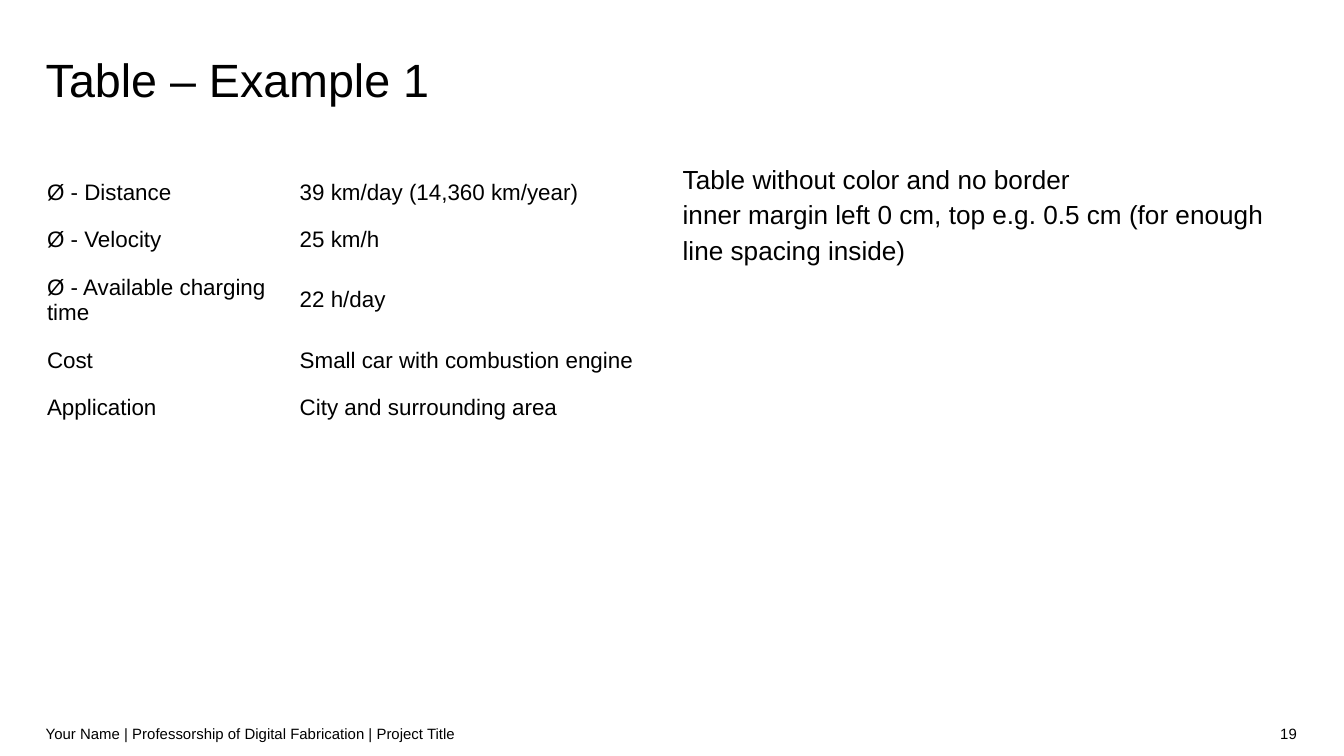
from dataclasses import dataclass

from pptx import Presentation
from pptx import util as u
from pptx.dml.color import RGBColor
from pptx.enum import text


@dataclass(frozen=True)
class Theme:
    """Colours, font and type sizes of the slide."""
    ink: RGBColor = RGBColor(0, 0, 0)
    paper: RGBColor = RGBColor(255, 255, 255)
    font: str = "Arial"
    title: int = 25
    body: int = 14
    cell: int = 12
    footer: int = 8


THEME = Theme()
LEFT = 0.34
ROWS = (
    ("Ø - Distance", "39 km/day (14,360 km/year)"),
    ("Ø - Velocity", "25 km/h"),
    ("Ø - Available charging time", "22 h/day"),
    ("Cost", "Small car with combustion engine"),
    ("Application", "City and surrounding area"),
)


def write(tf, content, size, align=text.PP_ALIGN.LEFT, spacing=None):
    """Fill the first paragraph of a text frame and format it."""
    p = tf.paragraphs[0]
    p.text = content
    p.alignment = align
    if spacing is not None:
        p.line_spacing = spacing
    for r in p.runs:
        r.font.name = THEME.font
        r.font.size = u.Pt(size)
        r.font.color.rgb = THEME.ink


def add_text(s, box, content, size, anchor=text.MSO_ANCHOR.TOP, inset=0,
             fit=text.MSO_AUTO_SIZE.NONE, **fmt):
    """Add a wrapping text box with no side margins."""
    tf = s.shapes.add_textbox(*map(u.Inches, box)).text_frame
    tf.word_wrap = True
    tf.auto_size = fit
    tf.vertical_anchor = anchor
    tf.margin_left = tf.margin_right = 0
    tf.margin_top = tf.margin_bottom = u.Inches(inset)
    write(tf, content, size, **fmt)


def add_plain_table(s, left, top, widths, height, row_height, rows):
    """Add a table without colour or border."""
    frame = s.shapes.add_table(
        len(rows), len(widths), u.Inches(left), u.Inches(top),
        u.Inches(sum(widths)), u.Inches(height))
    table = frame.table
    table.first_row = table.horz_banding = False
    style = table._tbl.tblPr[0]
    style.text = "{2D5ABB26-0587-4C30-8999-92F81FD0307C}"
    for column, width in zip(table.columns, widths):
        column.width = u.Inches(width)
    for row in table.rows:
        row.height = u.Inches(row_height)
    frame.height = u.Inches(height)
    for i, row in enumerate(rows):
        for j, content in enumerate(row):
            cell = table.cell(i, j)
            cell.fill.background()
            cell.vertical_anchor = text.MSO_ANCHOR.MIDDLE
            cell.margin_left = cell.margin_right = cell.margin_bottom = 0
            cell.margin_top = u.Inches(0.15)
            write(cell.text_frame, content, THEME.cell)


def add_footer(s, left, width, content, align):
    """Add one part of the footer line."""
    add_text(s, (left, 5.31, width, 0.3), content, THEME.footer,
             anchor=text.MSO_ANCHOR.MIDDLE, inset=0.05, align=align)


def main():
    """Build the slide and save it."""
    prs = Presentation()
    prs.slide_width = u.Inches(10)
    prs.slide_height = prs.slide_width * 9 // 16
    s = prs.slides.add_slide(prs.slide_layouts[6])
    s.background.fill.solid()
    s.background.fill.fore_color.rgb = THEME.paper
    add_text(s, (LEFT, 0.35, 9.31, 0.42), "Table – Example 1", THEME.title,
             fit=text.MSO_AUTO_SIZE.SHAPE_TO_FIT_TEXT, spacing=u.Pt(32))
    add_plain_table(s, 0.35, 1.18, (1.88, 2.7), 1.94, 0.35, ROWS)
    add_text(s, (5.08, 1.18, 4.57, 3.69),
             "Table without color and no border\n"
             "inner margin left 0 cm, top e.g. 0.5 cm "
             "(for enough line spacing inside)",
             THEME.body, spacing=1.14)
    add_footer(s, LEFT, 7.07,
               "Your Name | Professorship of Digital Fabrication | Project Title",
               text.PP_ALIGN.LEFT)
    add_footer(s, LEFT + 7.07, 2.24, "19", text.PP_ALIGN.RIGHT)
    prs.save("out.pptx")


if __name__ == "__main__":
    main()
